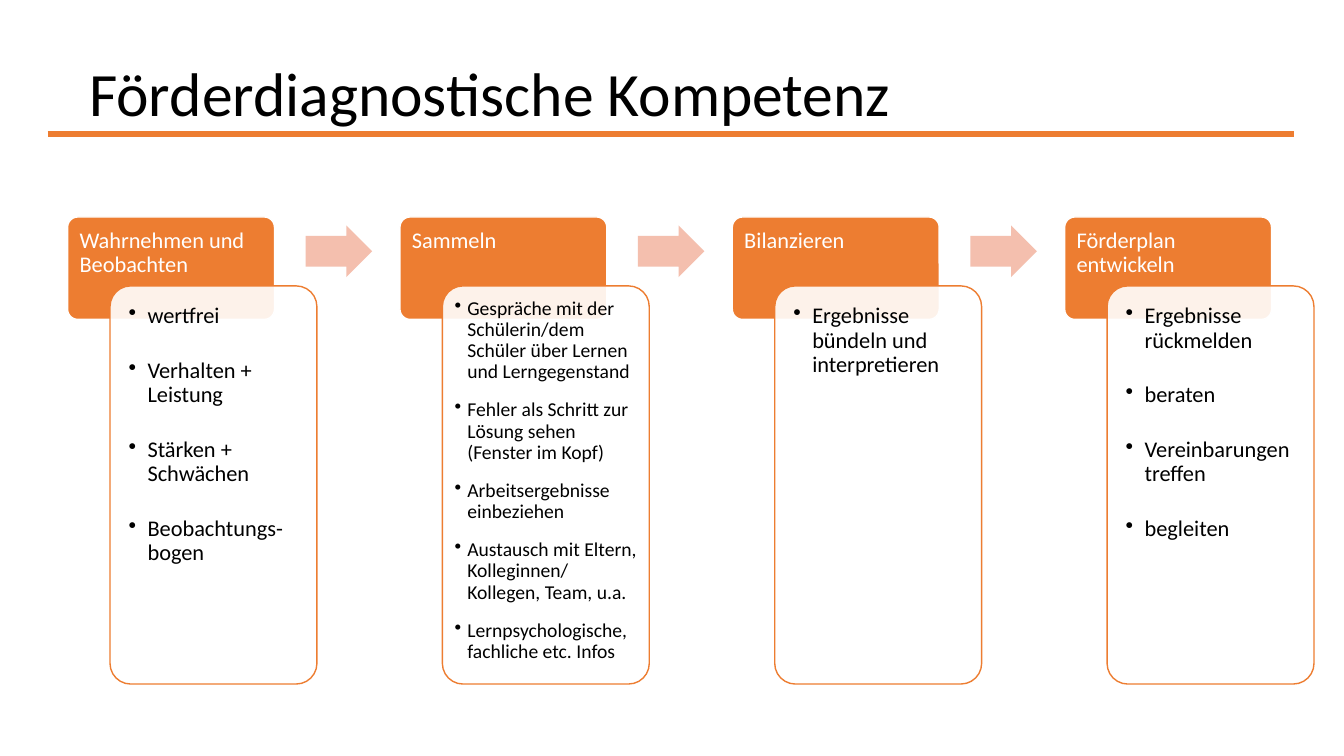
from dataclasses import dataclass

from lxml import etree
from pptx import Presentation
from pptx.dml.color import RGBColor
from pptx.enum.shapes import MSO_CONNECTOR, MSO_SHAPE
from pptx.enum.text import MSO_ANCHOR, PP_ALIGN
from pptx.oxml.ns import qn
from pptx.util import Pt

ROUNDED = MSO_SHAPE.ROUNDED_RECTANGLE
ARROW = MSO_SHAPE.RIGHT_ARROW
STRAIGHT = MSO_CONNECTOR.STRAIGHT
TOP, MIDDLE = MSO_ANCHOR.TOP, MSO_ANCHOR.MIDDLE
LEFT = PP_ALIGN.LEFT

ORANGE = RGBColor(0xED, 0x7D, 0x31)
SALMON = RGBColor(0xF4, 0xBF, 0xAE)
WHITE = RGBColor(0xFF, 0xFF, 0xFF)
BLACK = RGBColor(0x00, 0x00, 0x00)
FONT = "Calibri"
TITLE_ONLY_LAYOUT = 5

STAGE_PITCH = 237.4
CARD_WIDTH = 147.8


@dataclass
class ListStyle:
    size: float
    inset: float
    indent: float
    gap: float


ROOMY = ListStyle(size=16, inset=9, indent=13.5, gap=21.9)
COMPACT = ListStyle(size=14, inset=4.5, indent=9, gap=12.1)

STAGES = [
    ("Wahrnehmen und Beobachten", ROOMY,
     ["wertfrei", "Verhalten + Leistung", "Stärken + Schwächen",
      "Beobachtungs-bogen"]),
    ("Sammeln", COMPACT,
     ["Gespräche mit der Schülerin/dem Schüler über Lernen und Lerngegenstand",
      "Fehler als Schritt zur Lösung sehen (Fenster im Kopf)",
      "Arbeitsergebnisse einbeziehen",
      "Austausch mit Eltern, Kolleginnen/ Kollegen, Team, u.a.",
      "Lernpsychologische, fachliche etc. Infos"]),
    ("Bilanzieren", ROOMY, ["Ergebnisse bündeln und interpretieren"]),
    ("Förderplan entwickeln", ROOMY,
     ["Ergebnisse rückmelden", "beraten", "Vereinbarungen treffen",
      "begleiten"]),
]


def write_text(shape, lines, *, size, color, anchor=TOP, inset=(7.2, 3.6),
               indent=0, gap=0):
    """Write one paragraph per line; a positive indent adds bullets."""
    frame = shape.text_frame
    frame.word_wrap = True
    frame.vertical_anchor = anchor
    frame.margin_left = frame.margin_right = Pt(inset[0])
    frame.margin_top = frame.margin_bottom = Pt(inset[1])
    for index, line in enumerate(lines):
        paragraph = frame.paragraphs[0] if index == 0 else frame.add_paragraph()
        paragraph.alignment = LEFT
        paragraph.line_spacing = 0.9
        paragraph.space_before = Pt(0)
        paragraph.space_after = Pt(gap if index < len(lines) - 1 else 0)
        run = paragraph.add_run()
        run.text = line
        run.font.name = FONT
        run.font.size = Pt(size)
        run.font.color.rgb = color
        if indent:
            properties = paragraph._p.get_or_add_pPr()
            properties.set("marL", str(Pt(indent)))
            properties.set("indent", str(-Pt(indent)))
            etree.SubElement(properties, qn("a:buChar")).set("char", "•")


def add_block(slide, kind, left, top, width, height, *, fill, line=None,
              adjustments=(0.1,), opacity=100):
    shape = slide.shapes.add_shape(kind, Pt(left), Pt(top), Pt(width), Pt(height))
    shape.shadow.inherit = False
    for index, value in enumerate(adjustments):
        shape.adjustments[index] = value
    shape.fill.solid()
    shape.fill.fore_color.rgb = fill
    if opacity < 100:
        color = shape._element.spPr.find(qn("a:solidFill"))[0]
        etree.SubElement(color, qn("a:alpha")).set("val", str(opacity * 1000))
    if line is None:
        shape.line.fill.background()
    else:
        shape.line.color.rgb = line
        shape.line.width = Pt(1)
    return shape


def add_title(slide, left, top, width, height):
    title = slide.shapes.title
    title.left, title.top = Pt(left), Pt(top)
    title.width, title.height = Pt(width), Pt(height)
    write_text(title, ["Förderdiagnostische Kompetenz"], size=44, color=BLACK,
               anchor=MIDDLE)


def add_rule(slide, left, y, width):
    rule = slide.shapes.add_connector(STRAIGHT, Pt(left), Pt(y),
                                      Pt(left + width), Pt(y))
    rule.line.color.rgb = ORANGE
    rule.line.width = Pt(4.75)
    etree.SubElement(rule._element.spPr, qn("a:effectLst"))


def add_stage(slide, left, top, heading, style, items):
    """Draw a heading card with its list panel overlapping it."""
    card = add_block(slide, ROUNDED, left, top, CARD_WIDTH, 73.2,
                     fill=ORANGE, line=WHITE)
    write_text(card, [heading], size=16, color=WHITE, inset=(6.4, 6.4))
    panel = add_block(slide, ROUNDED, left + 30.3, top + 49.2, CARD_WIDTH, 284.4,
                      fill=WHITE, line=ORANGE, opacity=90)
    write_text(panel, items, size=style.size, color=BLACK,
               inset=(style.inset, style.inset), indent=style.indent,
               gap=style.gap)


def add_process(slide, left, top):
    for index, stage in enumerate(STAGES):
        stage_left = left + index * STAGE_PITCH
        add_stage(slide, stage_left, top, *stage)
        if index < len(STAGES) - 1:
            add_block(slide, ARROW, stage_left + 170, top + 6.1, 47.5, 36.8,
                      fill=SALMON, adjustments=(0.6, 0.5))


def main():
    presentation = Presentation()
    presentation.slide_width, presentation.slide_height = Pt(960), Pt(540)
    slide = presentation.slides.add_slide(
        presentation.slide_layouts[TITLE_ONLY_LAYOUT])
    add_title(slide, 56.4, 16.6, 828, 104.4)
    add_process(slide, 48.3, 155)
    add_rule(slide, 34, 95.8, 890)
    presentation.save("out.pptx")


if __name__ == "__main__":
    main()
